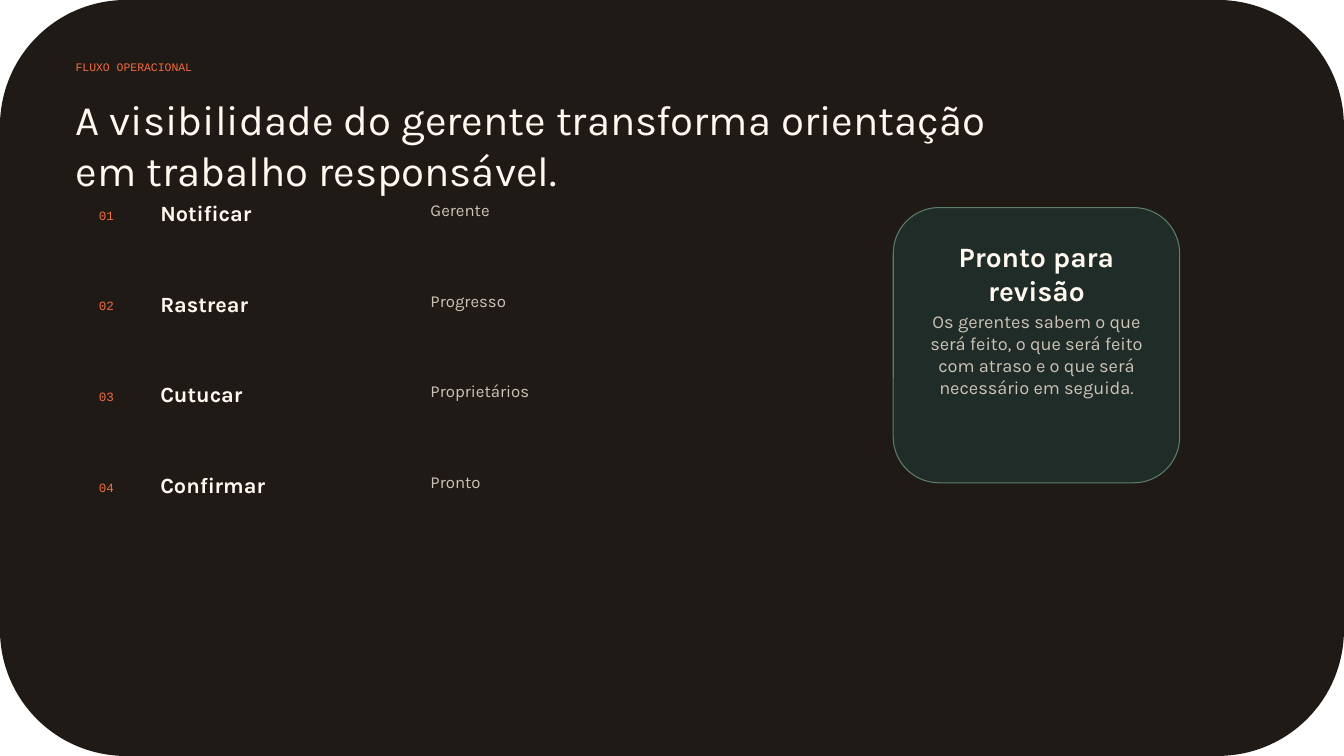
from dataclasses import dataclass

from pptx import Presentation
from pptx.dml.color import RGBColor
from pptx.enum.shapes import MSO_SHAPE
from pptx.enum.text import MSO_ANCHOR, MSO_AUTO_SIZE, PP_ALIGN
from pptx.util import Inches, Pt


@dataclass(frozen=True)
class TextStyle:
    size: float
    color: str
    font: str = "Karla"
    bold: bool = False


@dataclass(frozen=True)
class Theme:
    backdrop: str = "201A16"
    card: str = "1F2C27"
    card_border: str = "5C7E6B"
    eyebrow: TextStyle = TextStyle(8.2, "F26B3A", "Courier New")
    headline: TextStyle = TextStyle(30, "FFF9EF")
    number: TextStyle = TextStyle(9, "F26B3A", "Courier New")
    step: TextStyle = TextStyle(15.5, "FFF9EF", bold=True)
    detail: TextStyle = TextStyle(12, "CFC4B8")
    card_title: TextStyle = TextStyle(20, "FFF9EF", bold=True)
    card_body: TextStyle = TextStyle(13, "CFC4B8")


THEME = Theme()
STEPS = [
    ("Notificar", "Gerente"),
    ("Rastrear", "Progresso"),
    ("Cutucar", "Proprietários"),
    ("Confirmar", "Pronto"),
]
FIRST_STEP_TOP = 1.98
STEP_PITCH = 0.9


def write(frame, text, style, align=PP_ALIGN.LEFT):
    """Fill a text frame with one unpadded, top-anchored paragraph."""
    frame_format = {
        "word_wrap": True,
        "auto_size": MSO_AUTO_SIZE.NONE,
        "vertical_anchor": MSO_ANCHOR.TOP,
        "margin_left": 0,
        "margin_top": 0,
        "margin_right": 0,
        "margin_bottom": 0,
    }
    for name, value in frame_format.items():
        setattr(frame, name, value)
    paragraph = frame.paragraphs[0]
    paragraph.alignment = align
    run = paragraph.add_run()
    run.text = text
    font_format = {"name": style.font, "size": Pt(style.size), "bold": style.bold}
    for name, value in font_format.items():
        setattr(run.font, name, value)
    run.font.color.rgb = RGBColor.from_string(style.color)


def add_label(slide, box, text, style, align=PP_ALIGN.LEFT):
    label = slide.shapes.add_textbox(*map(Inches, box))
    write(label.text_frame, text, style, align)


def add_panel(slide, box, fill, border=None):
    panel = slide.shapes.add_shape(MSO_SHAPE.ROUNDED_RECTANGLE, *map(Inches, box))
    panel.shadow.inherit = False
    panel.fill.solid()
    panel.fill.fore_color.rgb = RGBColor.from_string(fill)
    if border:
        panel.line.color.rgb = RGBColor.from_string(border)
        panel.line.width = Pt(0.75)
    else:
        panel.line.fill.background()
    return panel


def set_headline(slide, box, text):
    headline = slide.shapes.title
    for name, value in zip(("left", "top", "width", "height"), box):
        setattr(headline, name, Inches(value))
    write(headline.text_frame, text, THEME.headline)


def add_step(slide, index, step, detail):
    top = FIRST_STEP_TOP + index * STEP_PITCH
    add_label(slide, (0.98, top + 0.08, 0.55, 0.24), f"{index + 1:02}", THEME.number)
    add_label(slide, (1.59, top, 2.84, 0.28), step, THEME.step)
    add_label(slide, (4.27, top, 3.94, 0.31), detail, THEME.detail)


def add_card(slide, title, body):
    add_panel(slide, (8.86, 2.06, 2.84, 2.73), THEME.card, THEME.card_border)
    add_label(slide, (9.13, 2.38, 2.3, 0.46), title, THEME.card_title, PP_ALIGN.CENTER)
    add_label(slide, (9.13, 3.08, 2.3, 0.98), body, THEME.card_body, PP_ALIGN.CENTER)


def main():
    deck = Presentation()
    deck.slide_width = Inches(13.33)
    deck.slide_height = Inches(7.5)
    slide = deck.slides.add_slide(deck.slide_layouts.get_by_name("Title Only"))

    backdrop = add_panel(slide, (0, 0, 13.33, 7.5), THEME.backdrop)
    # The title placeholder already exists, so the backdrop moves behind it.
    slide.shapes.title.element.addprevious(backdrop.element)

    add_label(slide, (0.75, 0.6, 4.59, 0.28), "FLUXO OPERACIONAL", THEME.eyebrow)
    set_headline(
        slide,
        (0.75, 0.93, 9.41, 0.71),
        "A visibilidade do gerente transforma orientação em trabalho responsável.",
    )
    for index, (step, detail) in enumerate(STEPS):
        add_step(slide, index, step, detail)
    add_card(
        slide,
        "Pronto para revisão",
        "Os gerentes sabem o que será feito, o que será feito com atraso "
        "e o que será necessário em seguida.",
    )
    deck.save("out.pptx")


if __name__ == "__main__":
    main()
